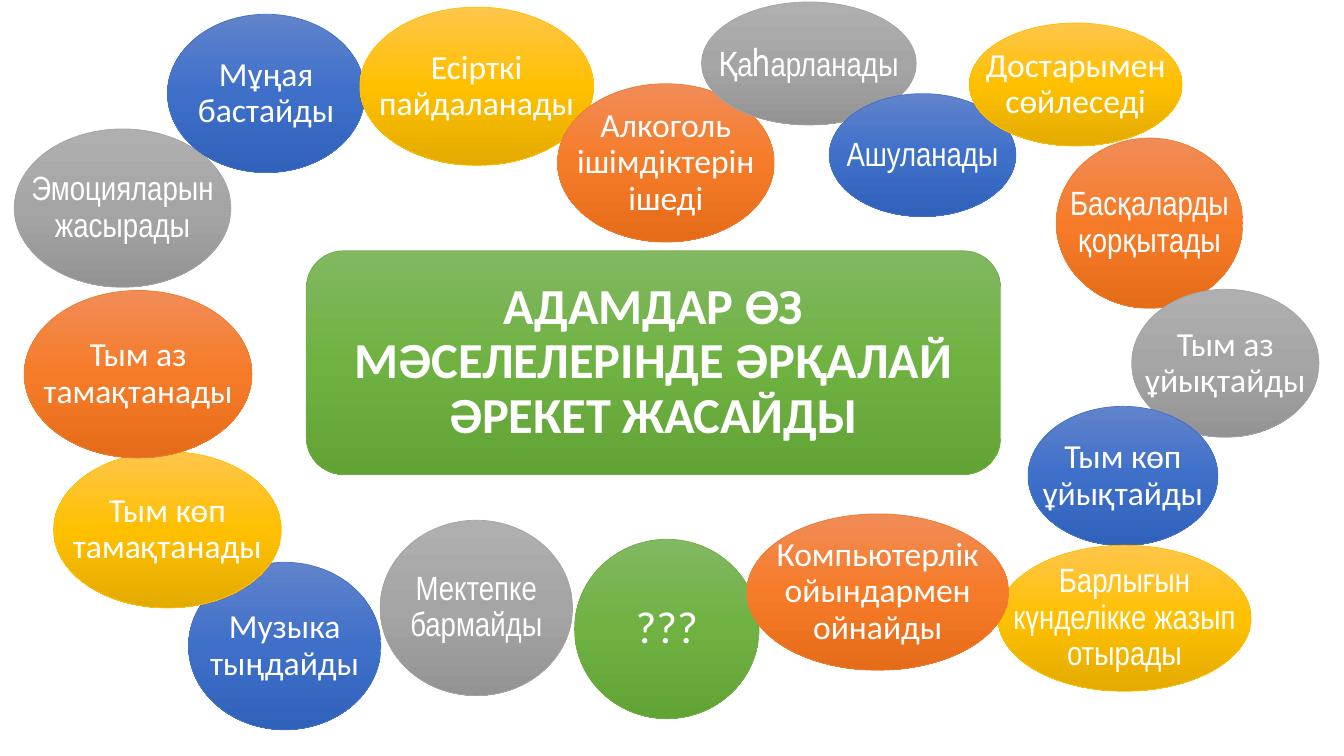
from copy import deepcopy

from pptx import Presentation
from pptx.dml.color import RGBColor
from pptx.enum.shapes import MSO_SHAPE
from pptx.enum.text import MSO_ANCHOR, PP_ALIGN
from pptx.oxml.ns import qn
from pptx.util import Cm, Pt

OVAL, ROUNDED = MSO_SHAPE.OVAL, MSO_SHAPE.ROUNDED_RECTANGLE
MIDDLE, CENTER = MSO_ANCHOR.MIDDLE, PP_ALIGN.CENTER
SANS, NARROW = "Calibri", "Arial Narrow"

# Outline colour, then the gradient from top to bottom
PALETTE = {
    "gray": ("A5A5A5", ("AFAFAF", "A5A5A5", "939393")),
    "blue": ("4472C4", ("6183CB", "3E70CA", "3062BB")),
    "gold": ("FFC000", ("FFC64B", "FFC000", "E3AB00")),
    "orange": ("ED7D31", ("F18C57", "F67B28", "E56C19")),
    "green": ("70AD47", ("81B861", "6FB242", "62A336")),
}

TITLE = "АДАМДАР ӨЗ МӘСЕЛЕЛЕРІНДЕ ӘРҚАЛАЙ ӘРЕКЕТ ЖАСАЙДЫ"

# Left, top, width, height in cm, colour, font, text; back to front
REACTIONS = [
    (9.58, 13.11, 4.85, 4.42, "gray", NARROW, "Мектепке\nбармайды"),
    (4.75, 14.17, 4.85, 4.22, "blue", SANS, "Музыка\nтыңдайды"),
    (1.35, 11.38, 5.74, 3.94, "gold", SANS, "Тым көп\nтамақтанады"),
    (0.61, 7.32, 5.74, 4.22, "orange", SANS, "Тым аз\nтамақтанады"),
    (0.36, 3.25, 5.46, 3.99, "gray", NARROW, "Эмоцияларын\nжасырады"),
    (4.22, 0.36, 4.98, 3.99, "blue", SANS, "Мұңая\nбастайды"),
    (14.48, 13.59, 4.65, 4.52, "green", SANS, "???"),
    (9.07, 0.18, 5.89, 3.99, "gold", SANS, "Есірткі\nпайдаланады"),
    (14.05, 2.11, 5.46, 3.99, "orange", SANS, "Алкоголь\nішімдіктерін\nішеді"),
    (17.68, 0.05, 5.41, 3.1, "gray", NARROW, "Қаһарланады"),
    (20.9, 2.36, 4.7, 3.1, "blue", NARROW, "Ашуланады"),
    (24.43, 0.58, 5.36, 3.1, "gold", SANS, "Достарымен\nсөйлеседі"),
    (26.62, 3.48, 4.7, 4.29, "orange", NARROW, "Басқаларды\nқорқытады"),
    (28.52, 7.29, 4.72, 3.73, "gray", SANS, "Тым аз\nұйықтайды"),
    (25.91, 10.24, 4.78, 3.51, "blue", SANS, "Тым көп\nұйықтайды"),
    (25.15, 13.74, 6.38, 3.68, "gold", NARROW, "Барлығын\nкүнделікке жазып\nотырады"),
    (18.82, 12.95, 6.6, 3.94, "orange", SANS, "Компьютерлік\nойындармен\nойнайды"),
]

# Texts whose letters are not all at the usual 24 points
SPECIAL_SPANS = {
    "???": [("???", 32)],
    "Қаһарланады": [("Қа", 24), ("һ", 28), ("арланады", 24)],
}


def color(value):
    return RGBColor.from_string(value)


def apply(target, values):
    for name, value in values.items():
        setattr(target, name, value)


class Painter:
    """Holds the style and the current slide."""

    text_color = "FFFFFF"
    line_width = Pt(0.5)
    line_spacing = 0.9

    def __init__(self, page):
        self.page = page

    def box(self, kind, place, tint):
        box = self.page.shapes.add_shape(kind, *map(Cm, place))
        box.shadow.inherit = False
        outline, shades = PALETTE[tint]
        box.line.color.rgb = color(outline)
        box.line.width = self.line_width

        # Three evenly spaced gradient stops, running downwards
        box.fill.gradient()
        box.fill.gradient_angle = 270
        stop_list = box._element.spPr.find(".//" + qn("a:gsLst"))
        stop_list.append(deepcopy(stop_list[0]))
        for index, (stop, shade) in enumerate(zip(box.fill.gradient_stops, shades)):
            stop.position = index / 2
            stop.color.rgb = color(shade)
        return box

    def text(self, box, spans, font, wrap, inset, bold=False):
        frame = box.text_frame
        apply(frame, {
            "word_wrap": wrap, "vertical_anchor": MIDDLE,
            "margin_left": Cm(inset[0]), "margin_right": Cm(inset[0]),
            "margin_top": Cm(inset[1]), "margin_bottom": Cm(inset[1]),
        })
        para = frame.paragraphs[0]
        apply(para, {"alignment": CENTER, "line_spacing": self.line_spacing})
        for words, size in spans:
            for index, line in enumerate(words.split("\n")):
                if index:
                    para.add_line_break()
                span = para.add_run()
                span.text = line
                apply(span.font, {"name": font, "size": Pt(size), "bold": bold})
                span.font.color.rgb = color(self.text_color)

    def title(self, place, words):
        box = self.box(ROUNDED, place, "green")
        self.text(box, [(words, 36)], SANS, True, (0.74, 0.36), bold=True)

    def reaction(self, place, tint, font, words):
        box = self.box(OVAL, place, tint)
        spans = SPECIAL_SPANS.get(words, [(words, 24)])
        self.text(box, spans, font, False, (0.3, 0.3))


def main():
    deck = Presentation()
    apply(deck, {"slide_width": Cm(33.87), "slide_height": Cm(19.05)})
    painter = Painter(deck.slides.add_slide(deck.slide_layouts[6]))

    # Central statement
    painter.title((7.72, 6.32, 17.5, 5.64), TITLE)

    # Ring of reactions
    for *place, tint, font, words in REACTIONS:
        painter.reaction(place, tint, font, words)

    deck.save("out.pptx")


if __name__ == "__main__":
    main()
